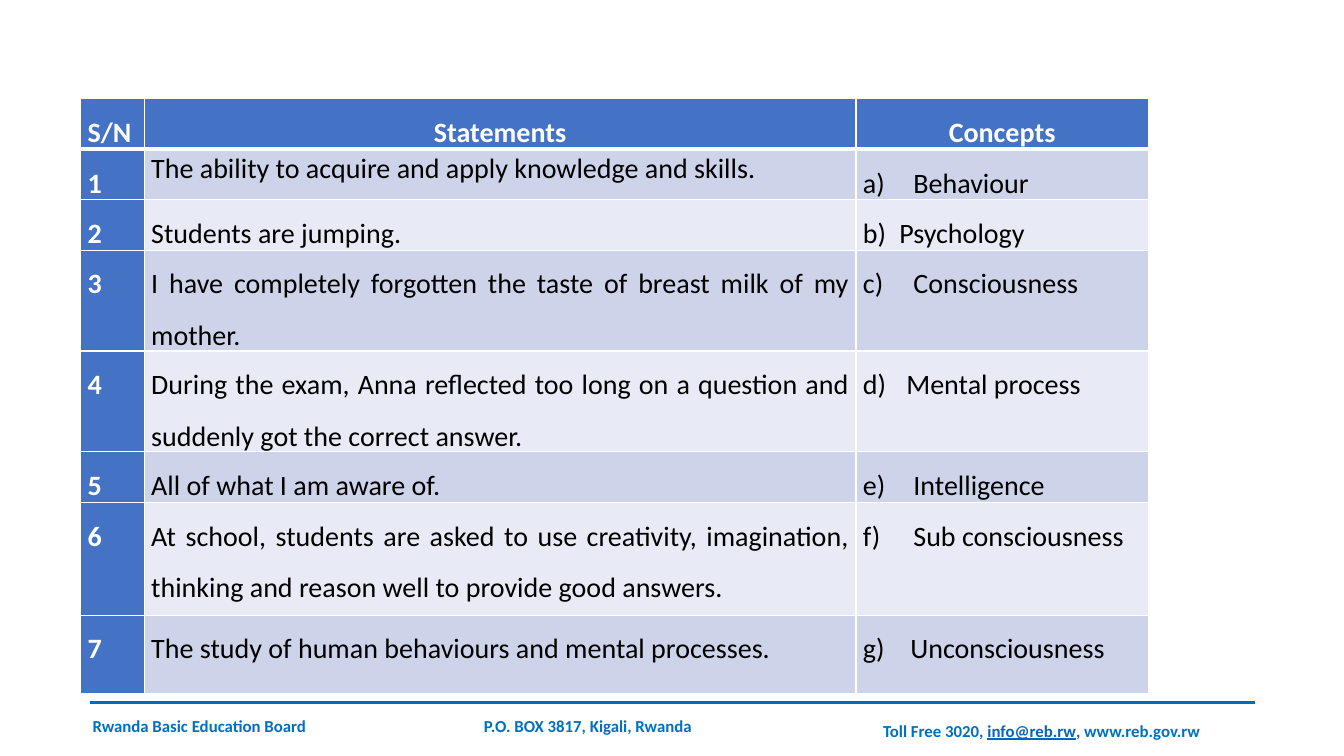
from dataclasses import dataclass

from lxml import etree
from pptx import Presentation
from pptx.dml.color import RGBColor
from pptx.enum.shapes import MSO_CONNECTOR
from pptx.enum.text import PP_ALIGN
from pptx.oxml.ns import qn
from pptx.util import Inches, Pt

LEFT, CENTER, JUSTIFY = PP_ALIGN.LEFT, PP_ALIGN.CENTER, PP_ALIGN.JUSTIFY
STRAIGHT = MSO_CONNECTOR.STRAIGHT


@dataclass
class Theme:
    font: str = "Calibri"
    table_size: int = 20
    footer_size: int = 12
    white: str = "FFFFFF"
    black: str = "000000"
    header: str = "4472C4"
    bands: tuple = ("CDD4EA", "E8EBF5")
    footer: str = "0070C0"
    mail: str = "0563C1"
    rule: str = "006BBC"


def add_solid(parent, tag, color):
    element = etree.SubElement(parent, qn(tag))
    etree.SubElement(element, qn("a:srgbClr"), val=color)


def add_number(para, start, indent, color):
    properties = para._p.get_or_add_pPr()
    properties.set("marL", str(Inches(indent)))
    properties.set("indent", str(-Inches(indent)))
    add_solid(properties, "a:buClr", color)
    etree.SubElement(properties, qn("a:buAutoNum"),
                     type="alphaLcParenR", startAt=str(start))


def write(para, text, *, font, size, color, bold=False, underline=False,
          align=LEFT, spacing=1.0):
    para.alignment = align
    para.line_spacing = spacing
    span = para.add_run()
    span.text = text
    span.font.name = font
    span.font.size = Pt(size)
    span.font.bold = bold
    span.font.underline = underline
    span.font.color.rgb = RGBColor.from_string(color)


def set_borders(cell, color, widths):
    properties = cell._tc.get_or_add_tcPr()
    for side, width in zip("LRTB", widths):
        border = etree.SubElement(properties, qn(f"a:ln{side}"), w=str(Pt(width)))
        add_solid(border, "a:solidFill", color)


class Page:
    """Draws elements on one slide, with lengths in percent of its size."""

    def __init__(self, deck, theme):
        self.deck, self.theme = deck, theme
        self.slide = deck.slides.add_slide(deck.slide_layouts[6])

    def x(self, share):
        return round(self.deck.slide_width * share / 100)

    def y(self, share):
        return round(self.deck.slide_height * share / 100)

    def footer(self, left, top, width, spans):
        box = self.slide.shapes.add_textbox(
            self.x(left), self.y(top), self.x(width), self.y(4.4))
        box.text_frame.word_wrap = True
        para = box.text_frame.paragraphs[0]
        for text, color, underline in spans:
            write(para, text, font=self.theme.font, size=self.theme.footer_size,
                  color=color, bold=True, underline=underline, spacing=1.15)

    def rule(self, left, right, top):
        line = self.slide.shapes.add_connector(
            STRAIGHT, self.x(left), self.y(top), self.x(right), self.y(top))
        line.line.color.rgb = RGBColor.from_string(self.theme.rule)
        line.line.width = Pt(2.5)
        etree.SubElement(line._element.spPr, qn("a:effectLst"))

    def table(self, left, top, columns, rows):
        frame = self.slide.shapes.add_table(
            len(rows), len(columns), self.x(left), self.y(top),
            self.x(sum(columns)), self.y(sum(rows)))
        table = frame.table
        for column, width in zip(table.columns, columns):
            column.width = self.x(width)
        for row, height in zip(table.rows, rows):
            row.height = self.y(height)
        return table

    def cell(self, table, row, column, text, align=JUSTIFY, spacing=1.5, number=None):
        theme = self.theme
        cell = table.cell(row, column)
        cell.margin_left = cell.margin_right = Inches(0.07)
        cell.margin_top = cell.margin_bottom = 0
        set_borders(cell, theme.white,
                    (1, 1, 3 if row == 1 else 1, 3 if row == 0 else 1))
        heading = row == 0 or column == 0
        fill = theme.header if heading else theme.bands[(row - 1) % 2]
        cell.fill.solid()
        cell.fill.fore_color.rgb = RGBColor.from_string(fill)
        para = cell.text_frame.paragraphs[0]
        if number:
            add_number(para, *number, theme.black)
        write(para, text, font=theme.font, size=theme.table_size, bold=heading,
              color=theme.white if heading else theme.black,
              align=align, spacing=spacing)


HEADINGS = (("S/N", JUSTIFY), ("Statements", CENTER), ("Concepts", CENTER))
MATCHES = (
    ("The ability to acquire and apply knowledge and skills.", "Behaviour", 0.5),
    ("Students are jumping.", "Psychology", 0.36),
    ("I have completely forgotten the taste of breast milk of my mother.",
     "Consciousness", 0.5),
    ("During the exam, Anna reflected too long on a question and suddenly got "
     "the correct answer.", "Mental process", 0.43),
    ("All of what I am aware of.", "Intelligence", 0.5),
    ("At school, students are asked to use creativity, imagination, thinking and "
     "reason well to provide good answers.", "Sub consciousness", 0.5),
    ("The study of human behaviours and mental processes.", "Unconsciousness", 0.47),
)
COLUMNS = (4.73, 52.96, 21.76)
ROWS = (6.67, 6.67, 6.67, 13.33, 13.33, 6.67, 14.93, 10.4)


def main():
    deck = Presentation()
    deck.slide_width, deck.slide_height = Inches(13.33), Inches(7.5)
    theme = Theme()
    page = Page(deck, theme)

    page.footer(6.15, 93.6, 20.56,
                [("Rwanda Basic Education Board", theme.footer, False)])
    page.footer(35.26, 93.6, 19.8,
                [("P.O. BOX 3817, Kigali, Rwanda", theme.footer, False)])
    page.footer(64.97, 94.27, 28.43,
                [("Toll Free 3020, ", theme.footer, False),
                 ("info@reb.rw", theme.mail, True),
                 (", www.reb.gov.rw", theme.footer, False)])
    page.rule(6.68, 93.4, 92.93)

    table = page.table(6, 13.07, COLUMNS, ROWS)
    for column, (heading, align) in enumerate(HEADINGS):
        page.cell(table, 0, column, heading, align)
    for row, (statement, concept, indent) in enumerate(MATCHES, start=1):
        page.cell(table, row, 0, str(row))
        first = row == 1
        page.cell(table, row, 1, statement, LEFT if first else JUSTIFY,
                  1.07 if first else 1.5)
        page.cell(table, row, 2, concept, number=(row, indent))

    deck.save("out.pptx")


if __name__ == "__main__":
    main()
